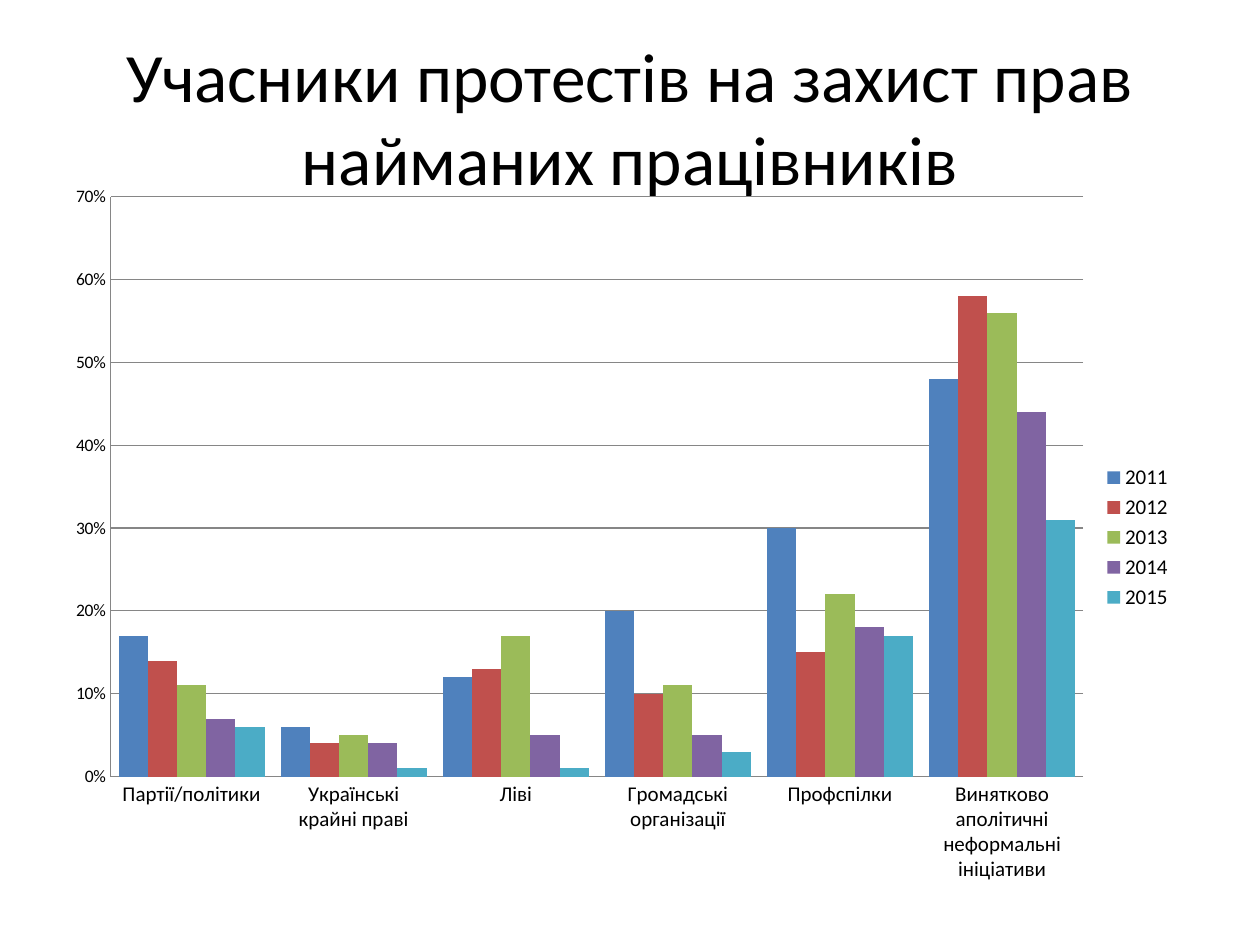
from lxml.etree import SubElement
from pptx import Presentation
from pptx.chart.data import CategoryChartData
from pptx.dml.color import RGBColor
from pptx.enum.chart import XL_CHART_TYPE, XL_LEGEND_POSITION, XL_TICK_MARK
from pptx.enum.text import MSO_ANCHOR, PP_ALIGN
from pptx.oxml.ns import qn
from pptx.util import Emu, Pt

FONT = "Calibri"
BLACK = RGBColor(0x00, 0x00, 0x00)
GRAY = RGBColor(0x86, 0x86, 0x86)
BLUE = RGBColor(0x4F, 0x81, 0xBD)
RED = RGBColor(0xC0, 0x50, 0x4D)
GREEN = RGBColor(0x9B, 0xBB, 0x59)
PURPLE = RGBColor(0x80, 0x64, 0xA2)
TEAL = RGBColor(0x4B, 0xAC, 0xC6)

TITLE = "Учасники протестів на захист прав найманих працівників"
CATEGORIES = [
    "Партії/політики",
    "Українські крайні праві",
    "Ліві",
    "Громадські організації",
    "Профспілки",
    "Винятково аполітичні неформальні ініціативи",
]
SERIES = [
    ("2011", BLUE, (0.17, 0.06, 0.12, 0.2, 0.3, 0.48)),
    ("2012", RED, (0.14, 0.04, 0.13, 0.1, 0.15, 0.58)),
    ("2013", GREEN, (0.11, 0.05, 0.17, 0.11, 0.22, 0.56)),
    ("2014", PURPLE, (0.07, 0.04, 0.05, 0.05, 0.18, 0.44)),
    ("2015", TEAL, (0.06, 0.01, 0.01, 0.03, 0.17, 0.31)),
]


def px(n):
    return Emu(round(n * 914400 / 126))


def set_font(font, size):
    font.name = FONT
    font.size = Pt(size)
    font.color.rgb = BLACK


def add_title(slide, text, x, y, w, h):
    tf = slide.shapes.add_textbox(px(x), px(y), px(w), px(h)).text_frame
    tf.word_wrap = True
    tf.vertical_anchor = MSO_ANCHOR.MIDDLE
    p = tf.paragraphs[0]
    p.text = text
    p.alignment = PP_ALIGN.CENTER
    set_font(p.font, 39.6)


def style_axis(axis, size):
    axis.major_tick_mark = XL_TICK_MARK.NONE
    axis.minor_tick_mark = XL_TICK_MARK.NONE
    axis.format.line.color.rgb = GRAY
    axis.format.line.width = Pt(0.75)
    set_font(axis.tick_labels.font, size)


def place_plot(chart, **fractions):
    plot_area = chart.plots[0]._element.getparent()
    layout = plot_area.find(qn("c:layout"))
    if layout is None:
        layout = SubElement(plot_area, qn("c:layout"))
        plot_area.insert(0, layout)
    manual = SubElement(layout, qn("c:manualLayout"))
    settings = {"layoutTarget": "inner", "xMode": "edge", "yMode": "edge", **fractions}
    for name, value in settings.items():
        SubElement(manual, qn(f"c:{name}")).set("val", str(value))


def add_column_chart(slide, x, y, w, h):
    data = CategoryChartData(number_format="0%")
    data.categories = CATEGORIES
    for name, _, values in SERIES:
        data.add_series(name, values)
    chart = slide.shapes.add_chart(
        XL_CHART_TYPE.COLUMN_CLUSTERED, px(x), px(y), px(w), px(h), data
    ).chart
    chart.has_title = False
    set_font(chart.font, 10)

    plot = chart.plots[0]
    plot.gap_width = 55
    plot.overlap = 0
    plot.vary_by_categories = False
    for series, (_, color, _) in zip(plot.series, SERIES):
        series.format.fill.solid()
        series.format.fill.fore_color.rgb = color

    style_axis(chart.category_axis, 12)
    axis = chart.value_axis
    style_axis(axis, 10)
    axis.minimum_scale = 0
    axis.maximum_scale = 0.7
    axis.major_unit = 0.1
    axis.tick_labels.number_format = "0%"
    axis.tick_labels.number_format_is_linked = False
    axis.has_major_gridlines = True
    axis.major_gridlines.format.line.color.rgb = GRAY
    axis.major_gridlines.format.line.width = Pt(0.75)

    chart.has_legend = True
    chart.legend.position = XL_LEGEND_POSITION.RIGHT
    chart.legend.include_in_layout = False
    set_font(chart.legend.font, 12)
    place_plot(chart, x=0.05, y=0.03, w=0.86, h=0.8)


def main():
    prs = Presentation()
    prs.slide_width = px(1260)
    prs.slide_height = px(945)
    slide = prs.slides.add_slide(prs.slide_layouts[6])
    add_title(slide, TITLE, 63, 38, 1134, 157)
    add_column_chart(slide, 54, 175, 1131, 725)
    prs.save("out.pptx")


if __name__ == "__main__":
    main()
